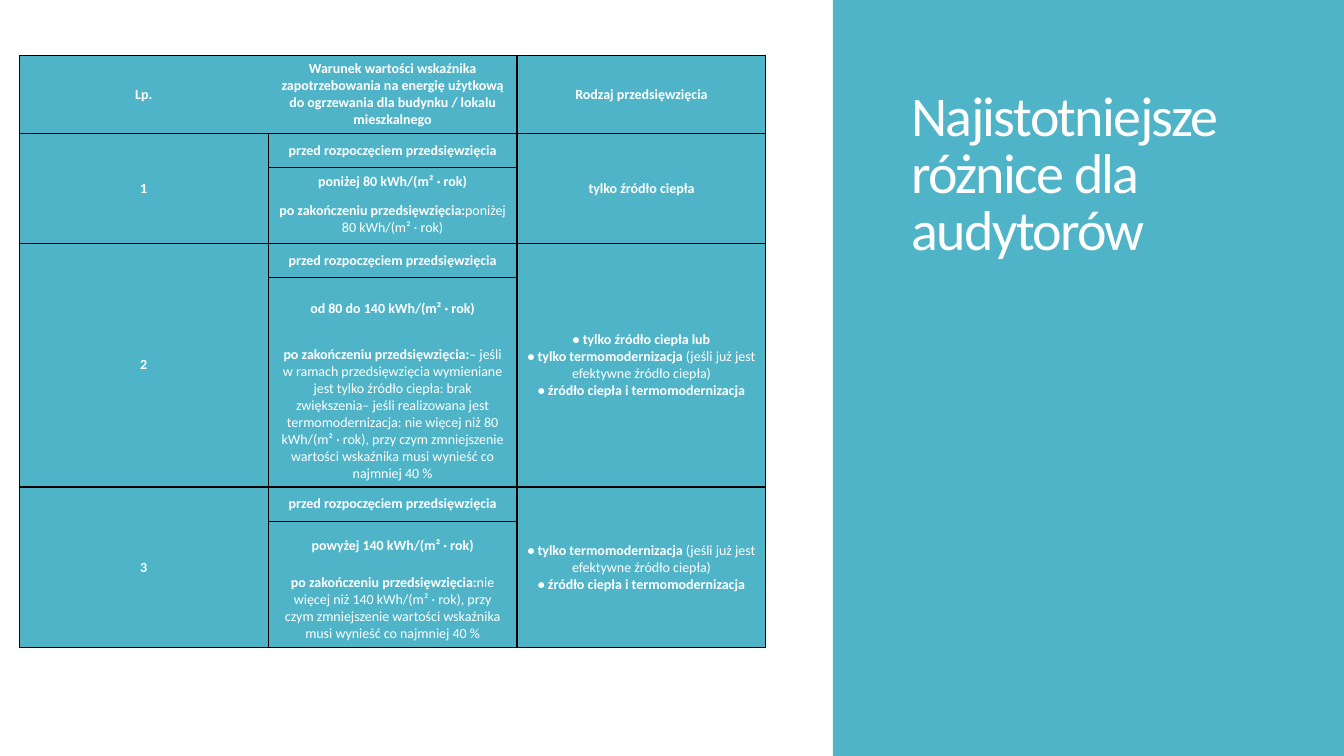
import dataclasses

import lxml.etree
import pptx
import pptx.dml.color
import pptx.enum.shapes
import pptx.enum.text
import pptx.oxml.ns
import pptx.util

ALIGN = pptx.enum.text.PP_ALIGN
ANCHOR = pptx.enum.text.MSO_ANCHOR


@dataclasses.dataclass(frozen=True)
class Theme:
    teal: str = "50B4C8"
    white: str = "FFFFFF"
    black: str = "000000"
    font: str = "Calibri"
    title_size: int = 40
    cell_size: int = 10
    border: int = 1


THEME = Theme()
WIDTH, HEIGHT = pptx.util.Inches(13.33), pptx.util.Inches(7.5)

# Left, top, width, height in percent of the slide
PANEL = (61.97, 0, 38.03, 100)
TITLE = (67.07, 7.33, 27.9, 28)
TABLE = (1.43, 7.33, 55.56, 73.2)

BEFORE = "przed rozpoczęciem przedsięwzięcia"
AFTER = "po zakończeniu przedsięwzięcia:"
BOTH = "• źródło ciepła i termomodernizacja"
THERMAL = "• tylko termomodernizacja"
EFFICIENT = "(jeśli już jest efektywne źródło ciepła)"

# A cell is a list of paragraphs, a paragraph a list of (text, bold) runs
HEADER = [
    "Lp.",
    "Warunek wartości wskaźnika zapotrzebowania na energię użytkową "
    "do ogrzewania dla budynku / lokalu mieszkalnego",
    "Rodzaj przedsięwzięcia",
]
HEADER_HEIGHT = 0.63
# Value before, condition after, kind of project, heights of the three rows
GROUPS = [
    (
        "poniżej 80 kWh/(m² · rok)",
        "poniżej 80 kWh/(m² · rok)",
        [[("tylko źródło ciepła", True)]],
        (0.34, 0.19, 0.48),
    ),
    (
        "od 80 do 140 kWh/(m² · rok)",
        "– jeśli w ramach przedsięwzięcia wymieniane jest tylko źródło ciepła: "
        "brak zwiększenia– jeśli realizowana jest termomodernizacja: nie więcej "
        "niż 80 kWh/(m² · rok), przy czym zmniejszenie wartości wskaźnika musi "
        "wynieść co najmniej 40 %",
        [
            [("• tylko źródło ciepła lub\n" + THERMAL + " ", True), (EFFICIENT, False)],
            [(BOTH, True)],
        ],
        (0.34, 0.63, 1.29),
    ),
    (
        "powyżej 140 kWh/(m² · rok)",
        "nie więcej niż 140 kWh/(m² · rok), przy czym zmniejszenie wartości "
        "wskaźnika musi wynieść co najmniej 40 %",
        [[(THERMAL, True), (" " + EFFICIENT, False)], [(BOTH, True)]],
        (0.34, 0.48, 0.77),
    ),
]


def rgb(value):
    return pptx.dml.color.RGBColor.from_string(value)


def place(box):
    x, y, w, h = (share / 100 for share in box)
    return int(x * WIDTH), int(y * HEIGHT), int(w * WIDTH), int(h * HEIGHT)


def set_attributes(target, values):
    for name, value in values.items():
        setattr(target, name, value)


def fill_solid(target, color):
    target.fill.solid()
    target.fill.fore_color.rgb = rgb(color)


def add_run(p, text, size, bold):
    r = p.add_run()
    r.text = text
    set_attributes(
        r.font, {"name": THEME.font, "size": pptx.util.Pt(size), "bold": bold}
    )
    r.font.color.rgb = rgb(THEME.white)
    return r


def set_borders(cell, sides):
    """Draw the sides named in a string of L, R, T, B and hide the others."""
    qn = pptx.oxml.ns.qn
    props = cell._tc.get_or_add_tcPr()
    for side in "LRTB":
        width = str(pptx.util.Pt(THEME.border))
        line = lxml.etree.SubElement(props, qn("a:ln" + side), w=width)
        if side in sides:
            paint = lxml.etree.SubElement(line, qn("a:solidFill"))
            lxml.etree.SubElement(paint, qn("a:srgbClr"), val=THEME.black)
        else:
            lxml.etree.SubElement(line, qn("a:noFill"))


def style_cell(cell, sides="LRTB"):
    set_borders(cell, sides)
    fill_solid(cell, THEME.teal)
    cell.vertical_anchor = ANCHOR.MIDDLE


def write_cell(cell, paragraphs):
    tf = cell.text_frame
    for i, runs in enumerate(paragraphs):
        p = tf.add_paragraph() if i else tf.paragraphs[0]
        p.alignment = ALIGN.CENTER
        for text, bold in runs:
            for n, line in enumerate(text.split("\n")):
                if n:
                    p.add_line_break()
                add_run(p, line, THEME.cell_size, bold)


def add_group(table, top, number, group):
    """Fill three rows whose outer cells are merged downwards."""
    value, condition, kind, heights = group
    middle = [
        ([(BEFORE, True)], "LRTB"),
        ([(value, True)], "LRT"),
        ([(AFTER, True), (condition, False)], "LRB"),
    ]
    for i, (runs, sides) in enumerate(middle):
        table.rows[top + i].height = pptx.util.Inches(heights[i])
        write_cell(table.cell(top + i, 1), [runs])
        style_cell(table.cell(top + i, 1), sides)
        for col in (0, 2):
            style_cell(table.cell(top + i, col))
    for col, content in ((0, [[(str(number), True)]]), (2, kind)):
        table.cell(top, col).merge(table.cell(top + 2, col))
        write_cell(table.cell(top, col), content)


def add_requirements(s):
    rows = 1 + 3 * len(GROUPS)
    table = s.shapes.add_table(rows, len(HEADER), *place(TABLE)).table
    set_attributes(table, {"first_row": False, "horz_banding": False})
    table.rows[0].height = pptx.util.Inches(HEADER_HEIGHT)
    for col, (text, sides) in enumerate(zip(HEADER, ("LTB", "RTB", "LRTB"))):
        write_cell(table.cell(0, col), [[(text, True)]])
        style_cell(table.cell(0, col), sides)
    for i, group in enumerate(GROUPS):
        add_group(table, 1 + 3 * i, i + 1, group)


def add_panel(s):
    """Put the colour panel behind the title."""
    kind = pptx.enum.shapes.MSO_SHAPE.RECTANGLE
    panel = s.shapes.add_shape(kind, *place(PANEL))
    panel.shadow.inherit = False
    fill_solid(panel, THEME.teal)
    panel.line.fill.background()
    s.shapes.title.element.addprevious(panel.element)


def set_title(s, text):
    sp = s.shapes.title
    set_attributes(sp, dict(zip(("left", "top", "width", "height"), place(TITLE))))
    tf = sp.text_frame
    set_attributes(tf, {
        "word_wrap": True,
        "auto_size": pptx.enum.text.MSO_AUTO_SIZE.NONE,
        "vertical_anchor": ANCHOR.BOTTOM,
    })
    p = tf.paragraphs[0]
    set_attributes(p, {"alignment": ALIGN.LEFT, "line_spacing": 0.85})
    r = add_run(p, text, THEME.title_size, False)
    r.font._element.set("spc", "-120")


def main():
    prs = pptx.Presentation()
    set_attributes(prs, {"slide_width": WIDTH, "slide_height": HEIGHT})
    s = prs.slides.add_slide(prs.slide_layouts.get_by_name("Title Only"))
    add_panel(s)
    set_title(s, "Najistotniejsze różnice dla audytorów")
    add_requirements(s)
    prs.save("out.pptx")


if __name__ == "__main__":
    main()
